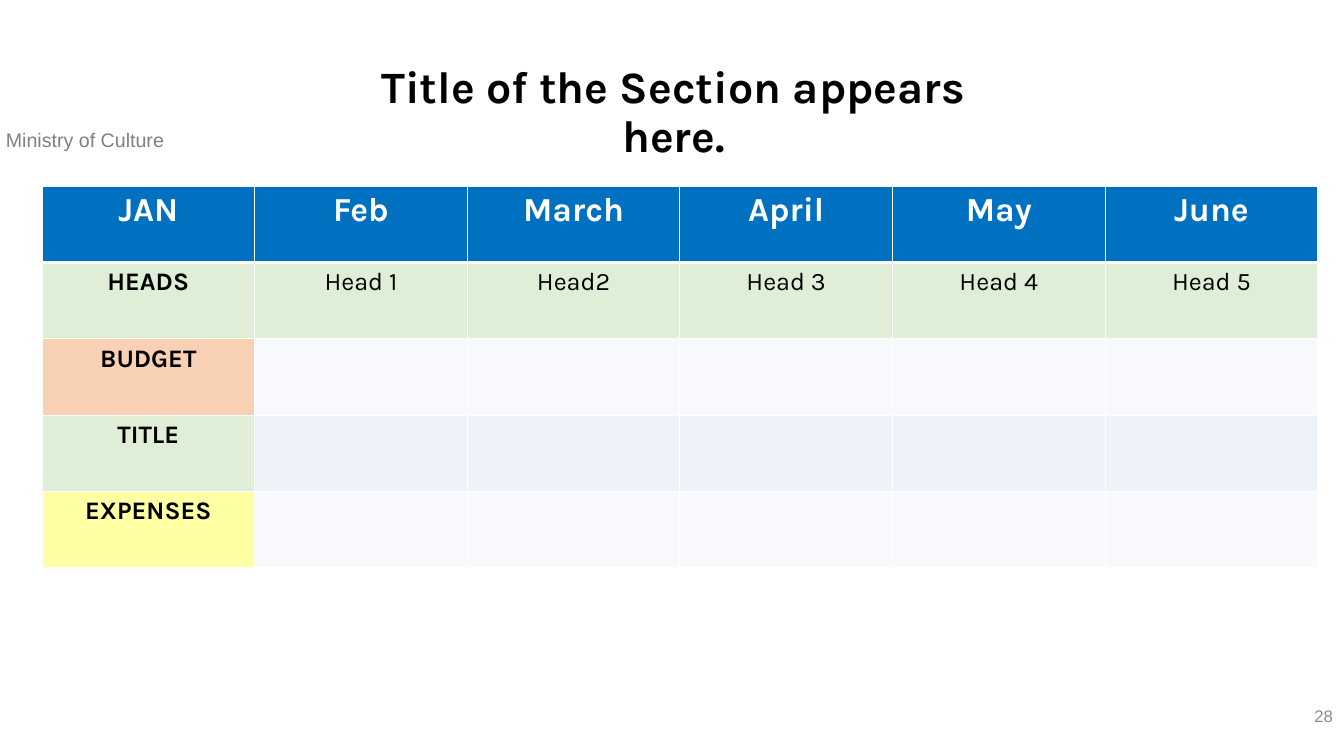
import dataclasses
import lxml.etree
import pptx
import pptx.dml.color
import pptx.enum.text
import pptx.oxml.ns
import pptx.slide
import pptx.table
import pptx.text.text
import pptx.util

EMU_PER_PX = 914400 / 100.8
ALIGN = pptx.enum.text.PP_ALIGN
ANCHOR = pptx.enum.text.MSO_ANCHOR


@dataclasses.dataclass(frozen=True)
class Theme:
    heading_font: str = "Karla"
    body_font: str = "Arial"
    black: str = "000000"
    white: str = "FFFFFF"
    ministry_grey: str = "808080"
    number_grey: str = "8C8C8C"
    blue: str = "0070C0"
    green: str = "A9D18E"
    orange: str = "ED7D31"
    yellow: str = "FFFF00"
    light_band: str = "EAEFF7"
    dark_band: str = "D2DEEF"
    tint_percent: int = 36
    title_size: int = 32
    month_size: int = 24
    cell_size: int = 18
    ministry_size: int = 14
    number_size: int = 12
    grid_width: int = 1
    header_rule_width: int = 3


THEME = Theme()


@dataclasses.dataclass(frozen=True)
class TextStyle:
    size: int
    color: str
    font: str = THEME.heading_font
    bold: bool = False
    align: ALIGN = ALIGN.CENTER


@dataclasses.dataclass(frozen=True)
class Label:
    text: str
    left: int
    top: int
    width: int
    height: int
    style: TextStyle
    anchor: ANCHOR = ANCHOR.TOP
    line_spacing: float = 1.0


@dataclasses.dataclass(frozen=True)
class BudgetRow:
    heading: str
    heading_fill: str
    band_fill: str
    entries: tuple[str, ...] = ("",) * 5


LABELS = (
    Label("Ministry of Culture", -4, 123, 292, 34,
          TextStyle(THEME.ministry_size, THEME.ministry_grey, THEME.body_font, align=ALIGN.LEFT)),
    Label("28", 1041, 696, 302, 40,
          TextStyle(THEME.number_size, THEME.number_grey, THEME.body_font, align=ALIGN.RIGHT),
          anchor=ANCHOR.MIDDLE),
    Label("Title of the Section appears here.", 331, 60, 685, 108,
          TextStyle(THEME.title_size, THEME.black, bold=True), line_spacing=0.9),
)
MONTHS = ("JAN", "Feb", "March", "April", "May", "June")
BUDGET_ROWS = (
    BudgetRow("HEADS", THEME.green, THEME.green, ("Head 1", "Head2", "Head 3", "Head 4", "Head 5")),
    BudgetRow("BUDGET", THEME.orange, THEME.light_band),
    BudgetRow("TITLE", THEME.green, THEME.dark_band),
    BudgetRow("EXPENSES", THEME.yellow, THEME.light_band),
)
MONTH_STYLE = TextStyle(THEME.month_size, THEME.white, bold=True)
HEADING_STYLE = TextStyle(THEME.cell_size, THEME.black, bold=True)
ENTRY_STYLE = TextStyle(THEME.cell_size, THEME.black)


def px(length: int) -> int:
    return pptx.util.Emu(round(length * EMU_PER_PX))


def write(frame: pptx.text.text.TextFrame, text: str, style: TextStyle) -> None:
    frame.text = text
    paragraph = frame.paragraphs[0]
    paragraph.alignment = style.align
    for font in [paragraph.font, *(run.font for run in paragraph.runs)]:
        font.name = style.font
        font.size = pptx.util.Pt(style.size)
        font.bold = style.bold
        font.color.rgb = pptx.dml.color.RGBColor.from_string(style.color)


def add_label(slide: pptx.slide.Slide, label: Label) -> None:
    box = slide.shapes.add_textbox(px(label.left), px(label.top), px(label.width), px(label.height))
    frame = box.text_frame
    frame.word_wrap = True
    frame.vertical_anchor = label.anchor
    write(frame, label.text, label.style)
    frame.paragraphs[0].line_spacing = label.line_spacing


def add_child(parent: lxml.etree._Element, tag: str, **attributes: str) -> lxml.etree._Element:
    return lxml.etree.SubElement(parent, pptx.oxml.ns.qn(tag), **attributes)


def set_borders(cell: pptx.table._Cell, top: int, bottom: int) -> None:
    properties = cell._tc.get_or_add_tcPr()
    side = THEME.grid_width
    for tag, width in (("a:lnL", side), ("a:lnR", side), ("a:lnT", top), ("a:lnB", bottom)):
        line = add_child(properties, tag, w=str(pptx.util.Pt(width)))
        add_child(add_child(line, "a:solidFill"), "a:srgbClr", val=THEME.white)


def fill_cell(cell: pptx.table._Cell, color: str, opacity: int) -> None:
    cell.fill.solid()
    cell.fill.fore_color.rgb = pptx.dml.color.RGBColor.from_string(color)
    if opacity < 100:
        solid = cell._tc.tcPr.find(pptx.oxml.ns.qn("a:solidFill"))
        swatch = solid.find(pptx.oxml.ns.qn("a:srgbClr"))
        add_child(swatch, "a:alpha", val=str(opacity * 1000))


def add_budget_table(slide: pptx.slide.Slide) -> None:
    table = slide.shapes.add_table(
        len(BUDGET_ROWS) + 1, len(MONTHS), px(42), px(186), px(1276), px(382)).table
    for column, month in enumerate(MONTHS):
        cell = table.cell(0, column)
        write(cell.text_frame, month, MONTH_STYLE)
        set_borders(cell, THEME.grid_width, THEME.header_rule_width)
        fill_cell(cell, THEME.blue, 100)
    for row, budget in enumerate(BUDGET_ROWS, start=1):
        top = THEME.header_rule_width if row == 1 else THEME.grid_width
        for column, text in enumerate((budget.heading, *budget.entries)):
            cell = table.cell(row, column)
            is_heading = column == 0
            write(cell.text_frame, text, HEADING_STYLE if is_heading else ENTRY_STYLE)
            set_borders(cell, top, THEME.grid_width)
            fill_cell(cell, budget.heading_fill if is_heading else budget.band_fill,
                      THEME.tint_percent)


def main() -> None:
    presentation = pptx.Presentation()
    presentation.slide_width = px(1344)
    presentation.slide_height = px(756)
    slide = presentation.slides.add_slide(presentation.slide_layouts[6])
    add_budget_table(slide)
    for label in LABELS:
        add_label(slide, label)
    presentation.save("out.pptx")


if __name__ == "__main__":
    main()
